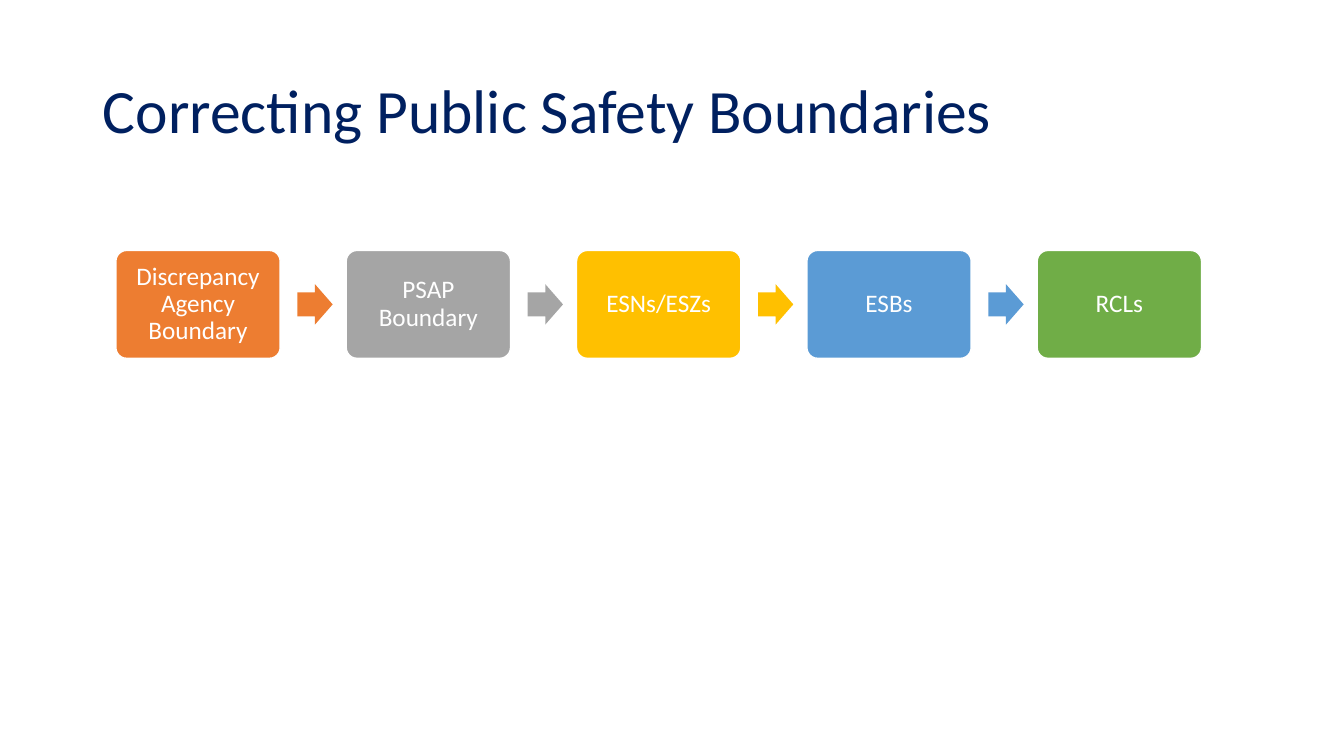
"""Build the slide on correcting public safety boundaries, a five-step process."""
from typing import Any, NamedTuple

from pptx import Presentation
from pptx import util as u
from pptx.dml import color
from pptx.enum import shapes, text

COLOURS = {
    "title": "002060",
    "white": "FFFFFF",
    "orange": "ED7D31",
    "grey": "A5A5A5",
    "gold": "FFC000",
    "blue": "5B9BD5",
    "green": "70AD47",
}
SLIDE_W, SLIDE_H = u.Inches(13.333), u.Inches(7.5)
FIRST_LEFT, PITCH = 1.15, 2.285
MIDDLE = 3.02
MARGINS = ("margin_left", "margin_right", "margin_top", "margin_bottom")


class Step(NamedTuple):
    label: str
    colour: str


class Part(NamedTuple):
    kind: Any
    offset: float
    width: float
    height: float
    adjustments: tuple[float, ...]


STEPS = [
    Step("Discrepancy Agency Boundary", "orange"),
    Step("PSAP Boundary", "grey"),
    Step("ESNs/ESZs", "gold"),
    Step("ESBs", "blue"),
    Step("RCLs", "green"),
]
BOX = Part(shapes.MSO_SHAPE.ROUNDED_RECTANGLE, 0, 1.63, 1.07, (0.1,))
ARROW = Part(shapes.MSO_SHAPE.RIGHT_ARROW, 1.8, 0.35, 0.4, (0.6, 0.5))


def rgb(name: str) -> color.RGBColor:
    """Return the named colour."""
    return color.RGBColor.from_string(COLOURS[name])


def apply(target: Any, values: dict[str, Any]) -> None:
    """Set each attribute of the target from the format values."""
    for name, value in values.items():
        setattr(target, name, value)


def write(sp: Any, label: str, size: int, colour: str, align: Any) -> None:
    """Write one formatted paragraph, centred vertically in the shape."""
    tf = sp.text_frame
    apply(tf, {"word_wrap": True, "auto_size": text.MSO_AUTO_SIZE.NONE,
               "vertical_anchor": text.MSO_ANCHOR.MIDDLE})
    p = tf.paragraphs[0]
    apply(p, {"alignment": align, "line_spacing": 0.9})
    r = p.add_run()
    r.text = label
    apply(r.font, {"name": "Calibri", "size": u.Pt(size)})
    r.font.color.rgb = rgb(colour)


def add_part(s: Any, part: Part, column: int, colour: str) -> Any:
    """Draw a part in its column, centred on the row of steps."""
    left = FIRST_LEFT + column * PITCH + part.offset
    top = MIDDLE - part.height / 2
    sp = s.shapes.add_shape(part.kind, *map(u.Inches, (left, top, part.width, part.height)))
    for i, value in enumerate(part.adjustments):
        sp.adjustments[i] = value
    sp.shadow.inherit = False
    sp.fill.solid()
    sp.fill.fore_color.rgb = rgb(colour)
    sp.line.fill.background()
    return sp


def add_step(s: Any, step: Step, column: int) -> None:
    """Draw a step's box with its label."""
    sp = add_part(s, BOX, column, step.colour)
    sp.line.color.rgb = rgb("white")
    sp.line.width = u.Pt(1)
    apply(sp.text_frame, dict.fromkeys(MARGINS, u.Inches(0.07)))
    write(sp, step.label, 18, "white", text.PP_ALIGN.CENTER)


def main() -> None:
    """Build and save the presentation."""
    prs = Presentation()
    apply(prs, {"slide_width": SLIDE_W, "slide_height": SLIDE_H})
    s = prs.slides.add_slide(prs.slide_layouts[5])
    title = s.shapes.title
    apply(title, {"left": u.Inches(0.92), "top": u.Inches(0.4),
                  "width": u.Inches(11.5), "height": u.Inches(1.45)})
    write(title, "Correcting Public Safety Boundaries", 44, "title", text.PP_ALIGN.LEFT)
    for column, step in enumerate(STEPS):
        add_step(s, step, column)
        if column < len(STEPS) - 1:
            add_part(s, ARROW, column, step.colour)
    prs.save("out.pptx")


if __name__ == "__main__":
    main()
